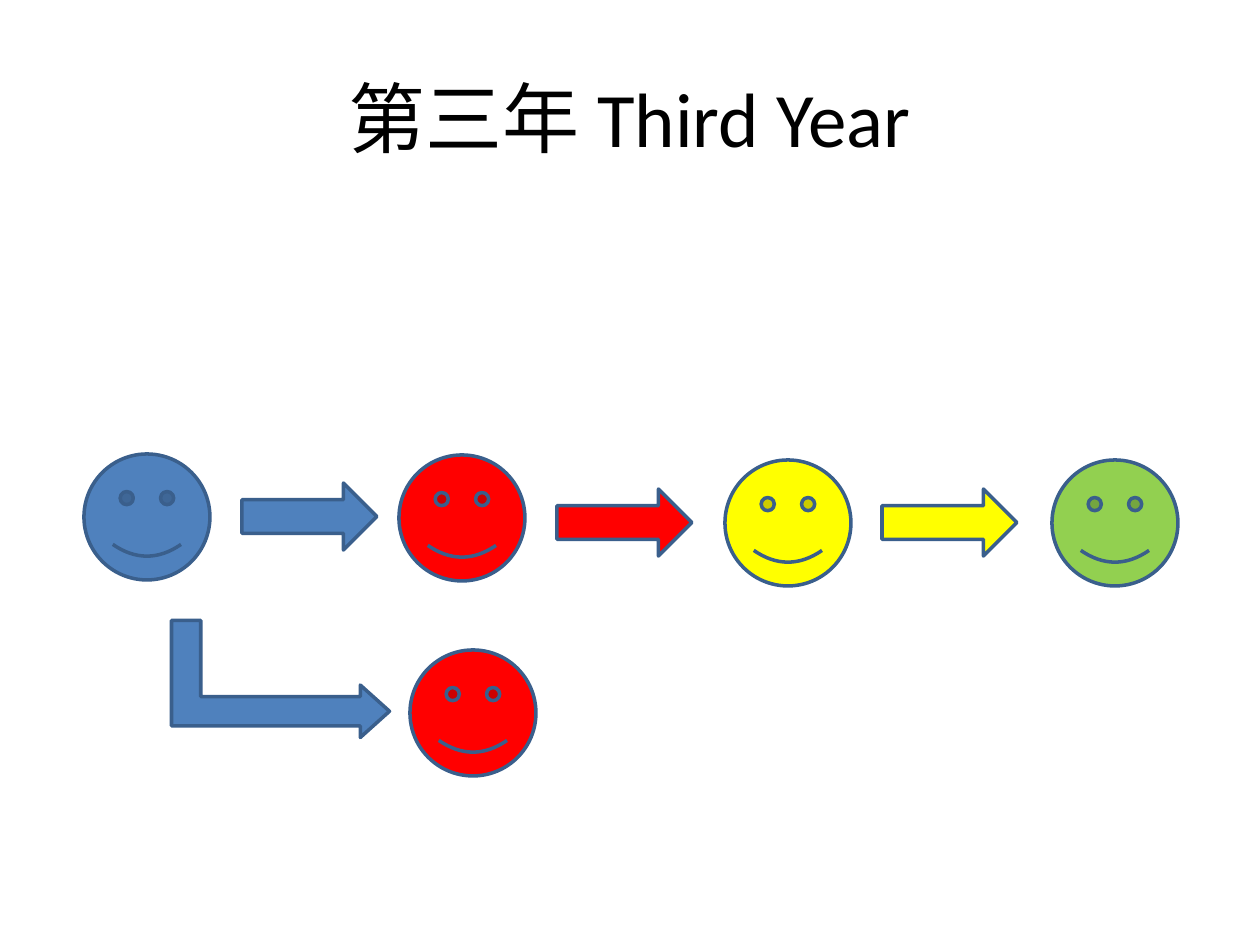
import pptx
import pptx.util
import pptx.dml.color
import pptx.enum.shapes
import pptx.enum.text

SCALE = 914400 / 126
KIND = pptx.enum.shapes.MSO_SHAPE
HUES = {
    "blue": "4F81BD",
    "red": "FF0000",
    "yellow": "FFFF00",
    "green": "92D050",
    "edge": "3A5F8C",
    "text": "000000",
}
FACE = 126
ARROW = (135, 67)


def emu(px):
    return pptx.util.Emu(round(px * SCALE))


def rgb(name):
    return pptx.dml.color.RGBColor.from_string(HUES[name])


def add_text(slide, text, box, size=18, font="Calibri", hue="text"):
    frame = slide.shapes.add_textbox(*map(emu, box)).text_frame
    frame.word_wrap = True
    frame.vertical_anchor = pptx.enum.text.MSO_ANCHOR.MIDDLE
    para = frame.paragraphs[0]
    para.alignment = pptx.enum.text.PP_ALIGN.CENTER
    run = para.add_run()
    run.text = text
    run.font.size = pptx.util.Pt(size)
    run.font.name = font
    run.font.color.rgb = rgb(hue)


def add_shape(slide, kind, box, hue):
    shape = slide.shapes.add_shape(kind, *map(emu, box))
    shape.shadow.inherit = False
    shape.fill.solid()
    shape.fill.fore_color.rgb = rgb(hue)
    shape.line.color.rgb = rgb("edge")
    shape.line.width = pptx.util.Pt(2)
    return shape


def add_face(slide, left, top, hue):
    add_shape(slide, KIND.SMILEY_FACE, (left, top, FACE, FACE), hue)


def add_arrow(slide, left, top, hue):
    add_shape(slide, KIND.RIGHT_ARROW, (left, top, *ARROW), hue)


def add_bend(slide, box, hue):
    bend = add_shape(slide, KIND.BENT_UP_ARROW, box, hue)
    bend.rotation = 90
    for i, value in enumerate((0.25, 0.224, 0.25)):
        bend.adjustments[i] = value


def main():
    deck = pptx.Presentation()
    deck.slide_width, deck.slide_height = emu(1260), emu(945)
    slide = deck.slides.add_slide(deck.slide_layouts[6])

    # Title
    add_text(slide, "第三年 Third Year", (63, 38, 1134, 157), size=44)

    # Main row of faces
    for left, top, hue in (
        (84, 454, "blue"),
        (399, 455, "red"),
        (725, 460, "yellow"),
        (1052, 460, "green"),
    ):
        add_face(slide, left, top, hue)

    # Arrows between the faces
    for left, top, hue in (
        (242, 483, "blue"),
        (557, 489, "red"),
        (882, 489, "yellow"),
    ):
        add_arrow(slide, left, top, hue)

    # Lower branch
    add_bend(slide, (222, 570, 117, 218), "blue")
    add_face(slide, 410, 650, "red")

    deck.save("out.pptx")


if __name__ == "__main__":
    main()
